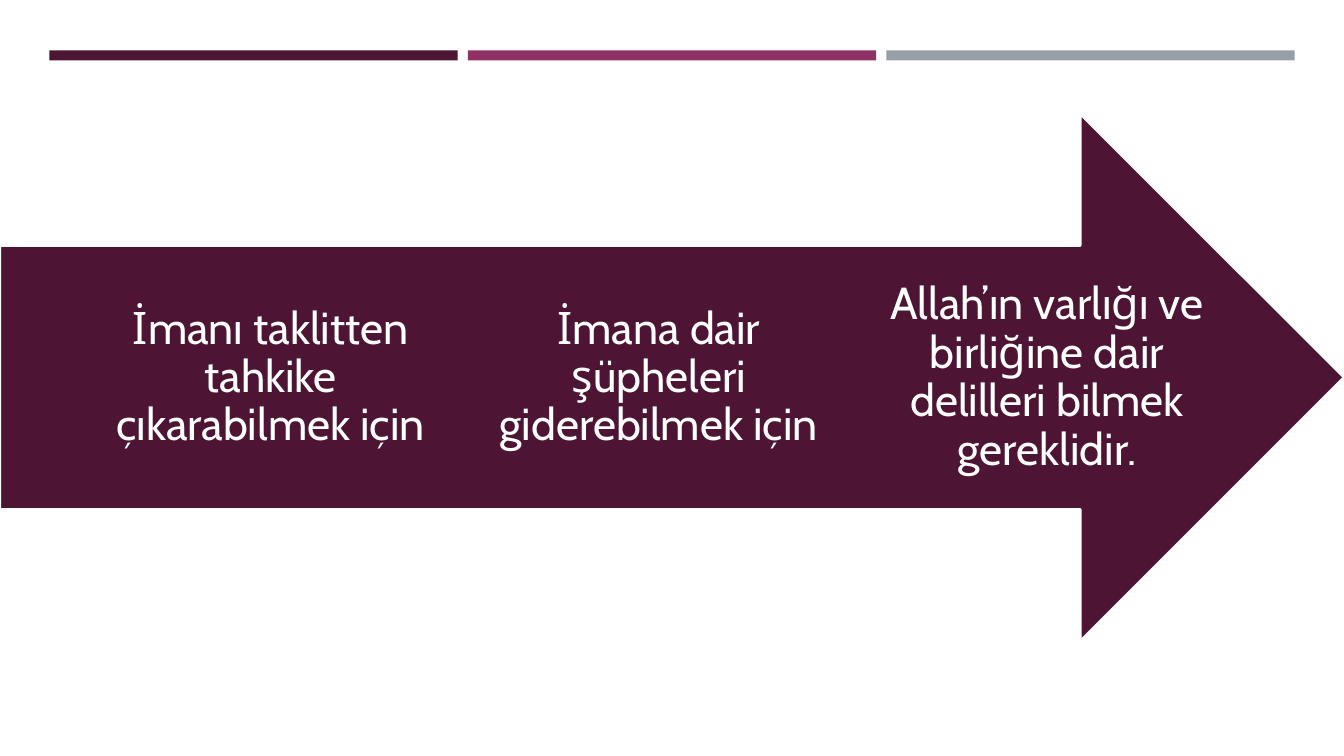
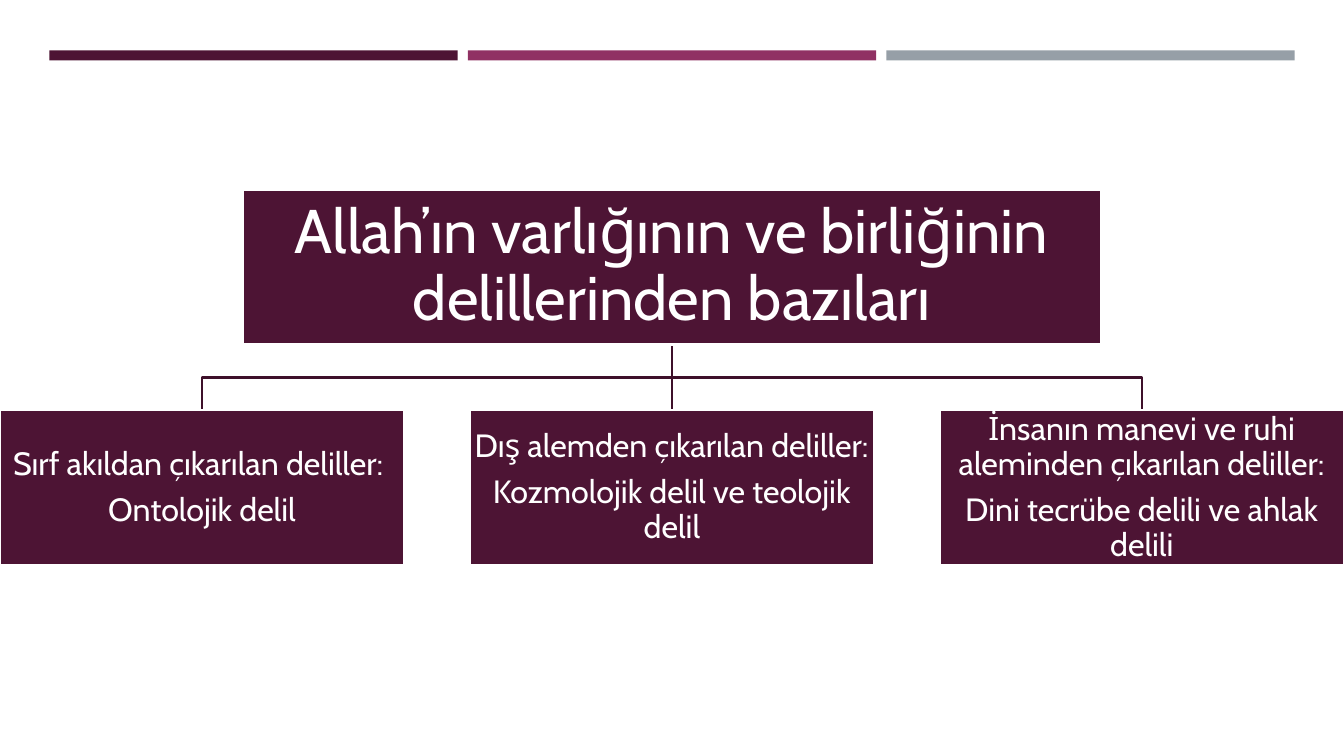
"""Build two slides on the proofs of the existence and oneness of Allah."""
from dataclasses import dataclass

from lxml import etree
from pptx import Presentation
from pptx import util as u
from pptx.dml.color import RGBColor
from pptx.enum import shapes, text
from pptx.oxml import ns

PLUM, MAGENTA, GREY, WHITE = "4D1434", "903163", "969FA7", "FFFFFF"
BRANCH_COLOUR = "3E102A"
FONT = "Cabin"
LINE_WIDTH = 1.75
SLIDE_WIDTH, SLIDE_HEIGHT = 13.33, 7.5

BAND_COLOURS = (PLUM, MAGENTA, GREY)
BAND_LEFT, BAND_TOP, BAND_WIDTH, BAND_HEIGHT, BAND_STEP = 0.49, 0.5, 4.05, 0.1, 4.15

REASONS = (
    "İmanı taklitten tahkike çıkarabilmek için",
    "İmana dair şüpheleri giderebilmek için",
    "Allah’ın varlığı ve birliğine dair delilleri bilmek gereklidir.",
)
REASON_LEFT, REASON_STEP = 1.08, 3.85

HEADING = "Allah’ın varlığının ve birliğinin delillerinden bazıları"
PROOFS = (
    ("Sırf akıldan çıkarılan deliller: ", "Ontolojik delil"),
    ("Dış alemden çıkarılan deliller:", "Kozmolojik delil ve teolojik delil"),
    ("İnsanın manevi ve ruhi aleminden çıkarılan deliller:",
     "Dini tecrübe delili ve ahlak delili"),
)
HEADING_WIDTH, HEADING_TOP = 8.52, 1.88
PROOF_WIDTH, PROOF_TOP, BOX_HEIGHT = 4.01, 4.07, 1.54


@dataclass(frozen=True)
class Area:
    """Position and size in inches."""

    left: float
    top: float
    width: float
    height: float

    @property
    def centre(self) -> float:
        """Return the horizontal middle."""
        return self.left + self.width / 2

    @property
    def bottom(self) -> float:
        """Return the lower edge."""
        return self.top + self.height

    def lengths(self) -> tuple:
        """Return the four values as lengths."""
        return tuple(map(u.Inches, (self.left, self.top, self.width, self.height)))


@dataclass(frozen=True)
class Label:
    """Paragraphs with their size and insets."""

    lines: tuple[str, ...]
    size: float
    side_inset: float
    end_inset: float


def colour(value: str) -> RGBColor:
    """Turn a hex string into a colour."""
    return RGBColor.from_string(value)


def set_line(item, value: str) -> None:
    """Give a shape or connector its outline."""
    item.line.color.rgb = colour(value)
    item.line.width = u.Pt(LINE_WIDTH)


def write_label(box, label: Label) -> None:
    """Write centred white paragraphs into a box."""
    frame = box.text_frame
    side, end = u.Inches(label.side_inset), u.Inches(label.end_inset)
    frame_format = {
        "word_wrap": True, "vertical_anchor": text.MSO_ANCHOR.MIDDLE,
        "margin_left": side, "margin_right": side,
        "margin_top": end, "margin_bottom": end,
    }
    para_format = {
        "alignment": text.PP_ALIGN.CENTER, "line_spacing": 0.9,
        "space_after": u.Pt(label.size * 0.35),
    }
    for name, value in frame_format.items():
        setattr(frame, name, value)
    for index, line in enumerate(label.lines):
        para = frame.add_paragraph() if index else frame.paragraphs[0]
        for name, value in para_format.items():
            setattr(para, name, value)
        span = para.add_run()
        span.text = line
        for name, value in {"name": FONT, "size": u.Pt(label.size)}.items():
            setattr(span.font, name, value)
        span.font.color.rgb = colour(WHITE)


def add_block(page, kind, area: Area, fill: str, outline: str | None = None):
    """Add a flat filled shape with an optional outline."""
    block = page.shapes.add_shape(kind, *area.lengths())
    block.shadow.inherit = False
    block.fill.solid()
    block.fill.fore_color.rgb = colour(fill)
    if outline:
        set_line(block, outline)
    else:
        block.line.fill.background()
    return block


def add_page(deck):
    """Add a blank page with the three coloured bands."""
    page = deck.slides.add_slide(deck.slide_layouts[6])
    for index, fill in enumerate(BAND_COLOURS):
        area = Area(BAND_LEFT + index * BAND_STEP, BAND_TOP, BAND_WIDTH, BAND_HEIGHT)
        add_block(page, shapes.MSO_SHAPE.RECTANGLE, area, fill)
    return page


def add_elbow(page, parent: Area, child: Area) -> None:
    """Draw a bent branch from a parent down to a child."""
    middle = (parent.bottom + child.top) / 2
    points = [(u.Inches(x), u.Inches(y)) for x, y in (
        (parent.centre, parent.bottom), (parent.centre, middle),
        (child.centre, middle), (child.centre, child.top))]
    builder = page.shapes.build_freeform(*points[0])
    builder.add_line_segments(points[1:], close=False)
    branch = builder.convert_to_shape()
    branch.shadow.inherit = False
    branch.fill.background()
    set_line(branch, BRANCH_COLOUR)


def add_trunk(page, parent: Area, child: Area):
    """Draw a straight branch from a parent down to a child."""
    trunk = page.shapes.add_connector(
        shapes.MSO_CONNECTOR.STRAIGHT,
        u.Inches(parent.centre), u.Inches(parent.bottom),
        u.Inches(child.centre), u.Inches(child.top))
    set_line(trunk, BRANCH_COLOUR)
    etree.SubElement(trunk._element.spPr, ns.qn("a:effectLst"))
    return trunk


def add_box(page, area: Area, label: Label):
    """Add a labelled plum rectangle."""
    box = add_block(page, shapes.MSO_SHAPE.RECTANGLE, area, PLUM, WHITE)
    write_label(box, label)
    return box


def build_reasons(deck) -> None:
    """Build the arrow that holds the three reasons."""
    page = add_page(deck)
    arrow = Area(0, 1.13, SLIDE_WIDTH, 5.23)
    add_block(page, shapes.MSO_SHAPE.RIGHT_ARROW, arrow, PLUM, WHITE)
    for index, reason in enumerate(REASONS):
        area = Area(REASON_LEFT + index * REASON_STEP, 2.44, 3.21, 2.62)
        box = page.shapes.add_textbox(*area.lengths())
        write_label(box, Label((reason,), 32, 0, 0.36))


def build_proofs(deck) -> None:
    """Build the tree of proofs."""
    page = add_page(deck)
    parent = Area((SLIDE_WIDTH - HEADING_WIDTH) / 2, HEADING_TOP, HEADING_WIDTH, BOX_HEIGHT)
    step = (SLIDE_WIDTH - PROOF_WIDTH) / (len(PROOFS) - 1)
    children = [Area(index * step, PROOF_TOP, PROOF_WIDTH, BOX_HEIGHT)
                for index in range(len(PROOFS))]
    left, middle, right = children
    add_elbow(page, parent, right)
    trunk = add_trunk(page, parent, middle)
    add_elbow(page, parent, left)
    heading = add_box(page, parent, Label((HEADING,), 44, 0.03, 0.03))
    boxes = [add_box(page, area, Label(lines, 23, 0.02, 0.02))
             for area, lines in zip(children, PROOFS)]
    trunk.begin_connect(heading, 2)
    trunk.end_connect(boxes[1], 0)


def main() -> None:
    """Build and save the deck."""
    deck = Presentation()
    deck.slide_width, deck.slide_height = u.Inches(SLIDE_WIDTH), u.Inches(SLIDE_HEIGHT)
    build_reasons(deck)
    build_proofs(deck)
    deck.save("out.pptx")


if __name__ == "__main__":
    main()
